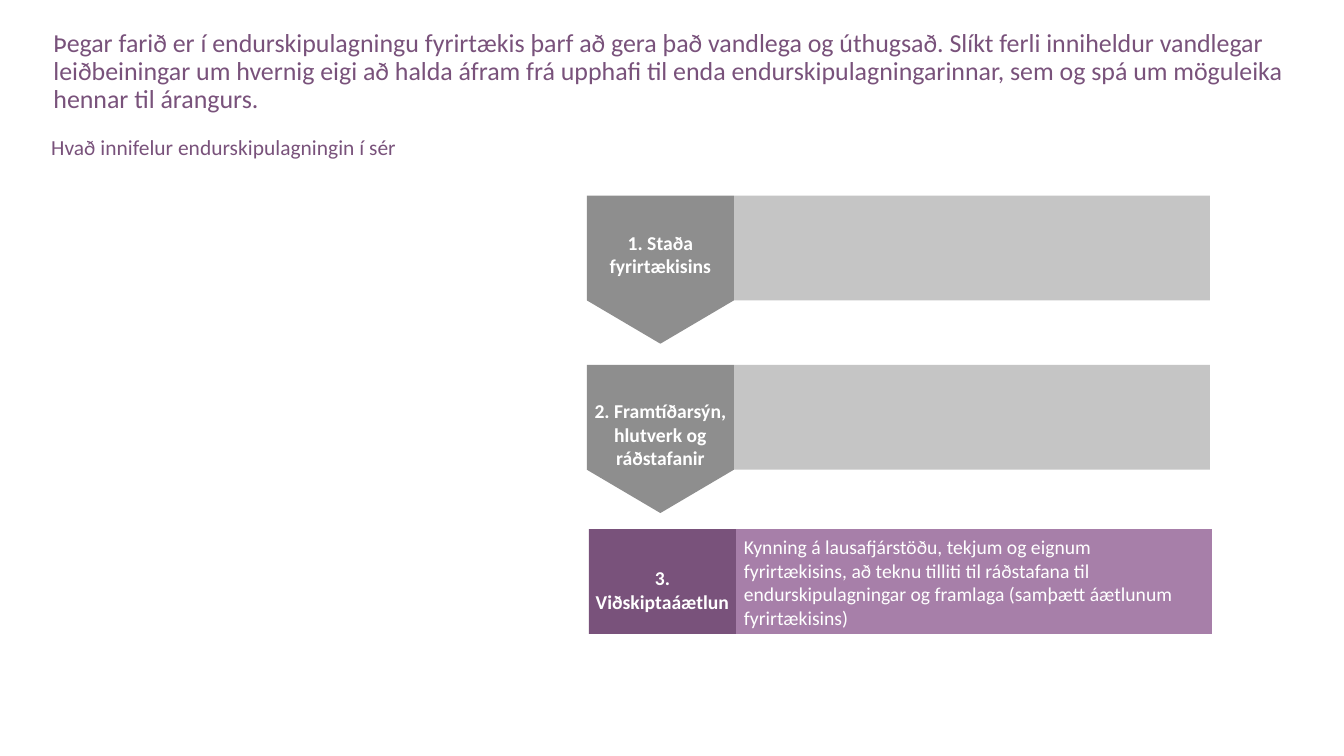
import pptx
import pptx.util
import pptx.dml.color
import pptx.enum.shapes
import pptx.enum.text
from dataclasses import dataclass

Inches = pptx.util.Inches
ALIGN = pptx.enum.text.PP_ALIGN


@dataclass(frozen=True)
class Theme:
    font: str = "Calibri"
    purple: str = "79527B"
    light_purple: str = "A77FA9"
    gray: str = "8E8E8E"
    light_gray: str = "C5C5C5"
    white: str = "FFFFFF"
    title_size: float = 18.5
    subtitle_size: float = 15.3
    body_size: float = 14


theme = Theme()


def write(box, text, size, color, bold=False, align=ALIGN.LEFT, line_spacing=1.0):
    frame = box.text_frame
    frame.word_wrap = True
    frame.auto_size = pptx.enum.text.MSO_AUTO_SIZE.NONE
    frame.vertical_anchor = pptx.enum.text.MSO_ANCHOR.TOP
    para = frame.paragraphs[0]
    para.alignment = align
    para.line_spacing = line_spacing
    para.space_before = pptx.util.Pt(0)
    span = para.add_run()
    span.text = text
    span.font.name = theme.font
    span.font.size = pptx.util.Pt(size)
    span.font.bold = bold
    span.font.color.rgb = pptx.dml.color.RGBColor.from_string(color)


def paint(shape, color):
    shape.shadow.inherit = False
    shape.fill.solid()
    shape.fill.fore_color.rgb = pptx.dml.color.RGBColor.from_string(color)
    shape.line.fill.background()


deck = pptx.Presentation()
deck.slide_width, deck.slide_height = Inches(13.33), Inches(7.5)
page = deck.slides.add_slide(deck.slide_layouts[5])

# Title and subtitle
title = page.shapes.title
title.left, title.top = Inches(0.43), Inches(0.25)
title.width, title.height = Inches(12.54), Inches(1.02)
write(title,
      "Þegar farið er í endurskipulagningu fyrirtækis þarf að gera það vandlega og úthugsað. "
      "Slíkt ferli inniheldur vandlegar leiðbeiningar um hvernig eigi að halda áfram frá "
      "upphafi til enda endurskipulagningarinnar, sem og spá um möguleika hennar til árangurs.",
      theme.title_size, theme.purple, line_spacing=0.9)
subtitle = page.shapes.add_textbox(Inches(0.41), Inches(1.35), Inches(12.56), Inches(0.28))
write(subtitle, "Hvað innifelur endurskipulagningin í sér",
      theme.subtitle_size, theme.purple, line_spacing=0.7)

# Steps: left, top, label top, label, description, is current
steps = [
    (5.82, 1.94, 2.24, "1. Staða fyrirtækisins", "", False),
    (5.82, 3.62, 3.91, "2. Framtíðarsýn, hlutverk og ráðstafanir", "", False),
    (5.84, 5.25, 5.57, "3. Viðskiptaáætlun",
     "Kynning á lausafjárstöðu, tekjum og eignum fyrirtækisins, að teknu tilliti til "
     "ráðstafana til endurskipulagningar og framlaga (samþætt áætlunum fyrirtækisins)", True),
]
tab_width, bar_width, bar_height, tip_height = 1.46, 4.72, 1.04, 0.43
rectangle = pptx.enum.shapes.MSO_SHAPE.RECTANGLE

for left, top, label_top, label, description, current in steps:
    # Description bar
    right = left + tab_width
    bar = page.shapes.add_shape(rectangle, Inches(right), Inches(top),
                                Inches(bar_width), Inches(bar_height))
    paint(bar, theme.light_purple if current else theme.light_gray)
    if description:
        detail = page.shapes.add_textbox(Inches(right - 0.02), Inches(top + 0.01),
                                         Inches(4.62), Inches(bar_height))
        write(detail, description, theme.body_size, theme.white)

    # Tab: a plain block for the last step, a downward pointer for the others
    if current:
        tab = page.shapes.add_shape(rectangle, Inches(left), Inches(top),
                                    Inches(tab_width), Inches(bar_height))
    else:
        bottom = top + bar_height
        outline = page.shapes.build_freeform(Inches(left), Inches(top))
        outline.add_line_segments([
            (Inches(right), Inches(top)),
            (Inches(right), Inches(bottom)),
            (Inches(left + tab_width / 2), Inches(bottom + tip_height)),
            (Inches(left), Inches(bottom)),
        ], close=True)
        tab = outline.convert_to_shape()
    paint(tab, theme.purple if current else theme.gray)

    # Step label
    caption = page.shapes.add_textbox(Inches(left - 0.06), Inches(label_top),
                                      Inches(1.58), Inches(0.57))
    write(caption, label, theme.body_size, theme.white, bold=True, align=ALIGN.CENTER)

deck.save("out.pptx")
